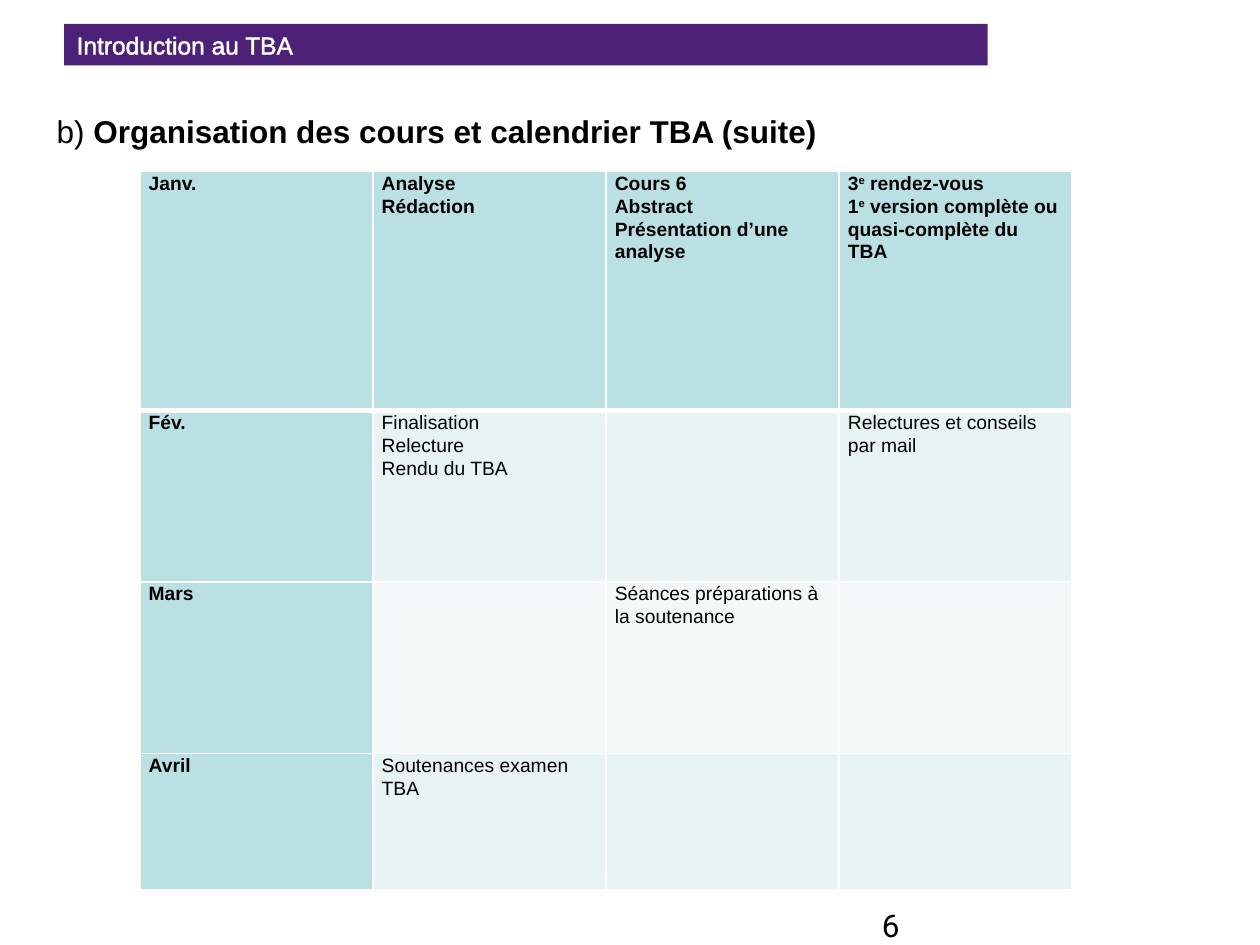
from dataclasses import dataclass

from lxml.etree import SubElement
from pptx import Presentation
from pptx.dml.color import RGBColor
from pptx.enum.shapes import MSO_SHAPE
from pptx.enum.text import MSO_ANCHOR, MSO_AUTO_SIZE, PP_ALIGN
from pptx.oxml.ns import qn
from pptx.util import Inches, Pt


@dataclass(frozen=True)
class Theme:
    font: str = "Arial"
    number_font: str = "Roboto"
    ink: str = "000000"
    white: str = "FFFFFF"
    banner: str = "4C2177"
    header: str = "BBE0E3"
    bands: tuple = ("E7F3F4", "F3F9FA")
    heading_size: int = 18
    banner_size: int = 14
    table_size: int = 11
    line_spacing: float = 1.07
    border: int = 1
    header_border: int = 3


COLUMNS, ROWS = 100, 75
CALENDAR_ROWS = [19, 13.6, 13.6, 10.8]
# Lines of a cell are separated by \n; text between ^ marks is raised.
CALENDAR = [
    ["Janv.", "Analyse\nRédaction", "Cours 6\nAbstract\nPrésentation d’une analyse",
     "3^e^ rendez-vous\n1^e^ version complète ou quasi-complète du TBA"],
    ["Fév.", "Finalisation\nRelecture\nRendu du TBA", "", "Relectures et conseils par mail"],
    ["Mars", "", "Séances préparations à la soutenance", ""],
    ["Avril", "Soutenances examen TBA", "", ""],
]


def add_outline(parent, tag, color, points):
    line = SubElement(parent, qn(tag), w=str(Pt(points)))
    SubElement(SubElement(line, qn("a:solidFill")), qn("a:srgbClr"), val=color)
    return line


class CourseSlide:
    def __init__(self, theme):
        self.theme = theme
        self.deck = Presentation()
        self.deck.slide_width, self.deck.slide_height = Inches(10), Inches(7.5)
        self.slide = self.deck.slides.add_slide(self.deck.slide_layouts[5])

    def across(self, columns):
        return round(self.deck.slide_width * columns / COLUMNS)

    def down(self, rows):
        return round(self.deck.slide_height * rows / ROWS)

    def area(self, left, top, width, height):
        return self.across(left), self.down(top), self.across(width), self.down(height)

    def style(self, run, size, bold=False, color=None, font=None):
        run.font.name = font or self.theme.font
        run.font.size = Pt(size)
        run.font.bold = bold
        run.font.color.rgb = RGBColor.from_string(color or self.theme.ink)

    def heading(self, label, wording, *area):
        title = self.slide.shapes.title
        title.left, title.top, title.width, title.height = self.area(*area)
        frame = title.text_frame
        frame.auto_size, frame.word_wrap = MSO_AUTO_SIZE.NONE, True
        frame.vertical_anchor = MSO_ANCHOR.TOP
        paragraph = frame.paragraphs[0]
        paragraph.alignment = PP_ALIGN.LEFT
        for text, bold in ((label, False), (wording, True)):
            run = paragraph.add_run()
            run.text = text
            self.style(run, self.theme.heading_size, bold)

    def banner(self, wording, *area):
        bar = self.slide.shapes.add_shape(MSO_SHAPE.RECTANGLE, *self.area(*area))
        bar.shadow.inherit = False
        bar.fill.solid()
        bar.fill.fore_color.rgb = RGBColor.from_string(self.theme.banner)
        bar.line.fill.background()
        frame = bar.text_frame
        frame.text = wording
        frame.vertical_anchor = MSO_ANCHOR.MIDDLE
        frame.paragraphs[0].alignment = PP_ALIGN.LEFT
        run = frame.paragraphs[0].runs[0]
        self.style(run, self.theme.banner_size, color=self.theme.white)
        properties = run.font._element
        properties.insert(0, add_outline(properties, "a:ln", self.theme.white, 0.75))

    def page_number(self, number, *area):
        frame = self.slide.shapes.add_textbox(*self.area(*area)).text_frame
        frame.word_wrap = True
        frame.text = number
        self.style(frame.paragraphs[0].runs[0], self.theme.heading_size,
                   font=self.theme.number_font)

    def calendar(self, entries, row_heights, left, top, width):
        area = self.area(left, top, width, sum(row_heights))
        table = self.slide.shapes.add_table(len(entries), len(entries[0]), *area).table
        for column in table.columns:
            column.width = self.across(width / len(entries[0]))
        for r, (texts, height) in enumerate(zip(entries, row_heights)):
            table.rows[r].height = self.down(height)
            for c, text in enumerate(texts):
                is_header = r == 0 or c == 0
                fill = self.theme.header if is_header else self.theme.bands[(r - 1) % 2]
                cell = table.cell(r, c)
                self.fill_cell(cell, text, is_header)
                self.paint_cell(cell, fill, r)

    def fill_cell(self, cell, text, bold):
        cell.margin_left = cell.margin_right = Inches(0.07)
        cell.margin_top = cell.margin_bottom = 0
        if not text:
            return
        cell.text_frame.text = text.replace("^", "")
        for paragraph, line in zip(cell.text_frame.paragraphs, text.split("\n")):
            paragraph.line_spacing = self.theme.line_spacing
            parts = line.split("^")
            paragraph.runs[0].text = parts[0]
            for part in parts[1:]:
                paragraph.add_run().text = part
            for position, run in enumerate(paragraph.runs):
                self.style(run, self.theme.table_size, bold)
                if position % 2:
                    run.font._element.set("baseline", "30000")

    def paint_cell(self, cell, fill, row):
        """Draw the white borders, thicker under the first row, then the fill."""
        properties = cell._tc.get_or_add_tcPr()
        heavy_side = {0: "B", 1: "T"}.get(row)
        for side in "LRTB":
            points = self.theme.header_border if side == heavy_side else self.theme.border
            add_outline(properties, f"a:ln{side}", self.theme.white, points)
        cell.fill.solid()
        cell.fill.fore_color.rgb = RGBColor.from_string(fill)


def main():
    course = CourseSlide(Theme())
    course.page_number("6", 69, 71.4, 18.1, 3.7)
    course.heading("b) ", "Organisation des cours et calendrier TBA (suite)", 3.5, 8.4, 89.1, 4)
    course.banner("Introduction au TBA", 5.1, 1.9, 73.3, 3.3)
    course.calendar(CALENDAR, CALENDAR_ROWS, 11.1, 13.6, 74)
    course.deck.save("out.pptx")


if __name__ == "__main__":
    main()
